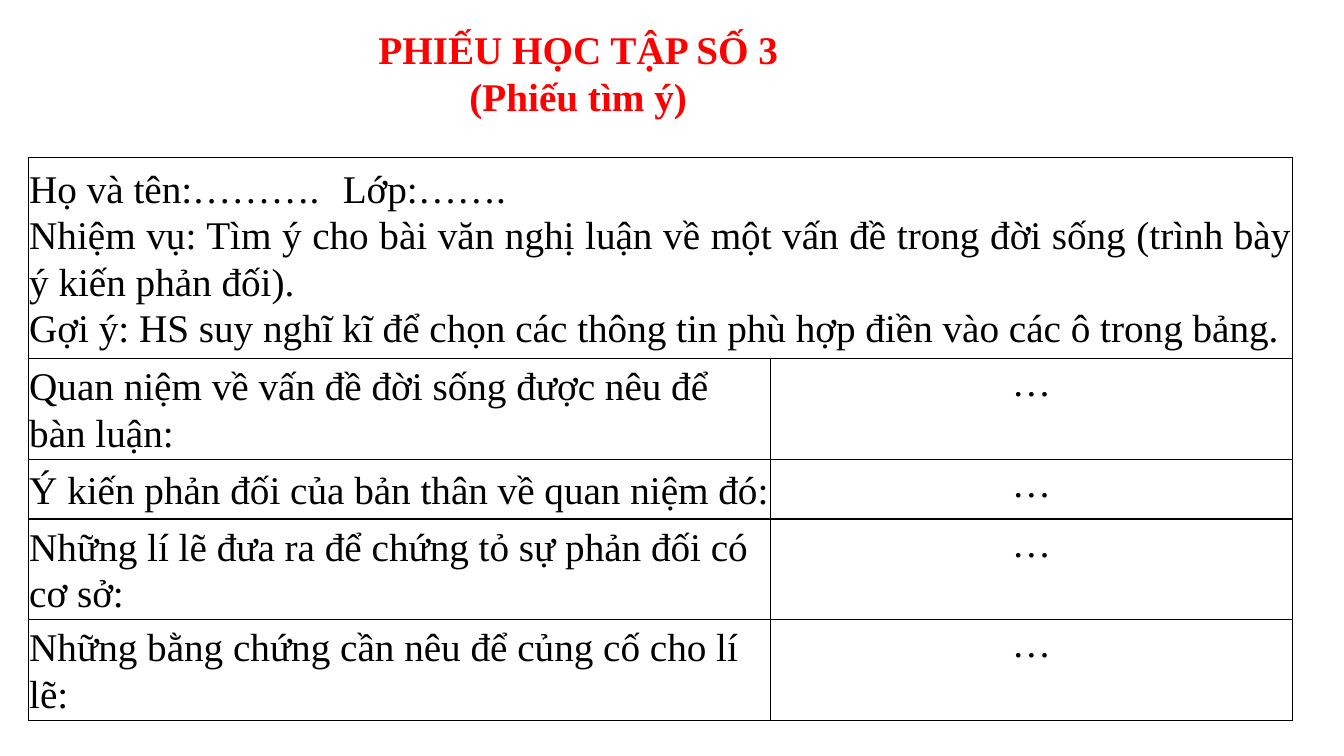
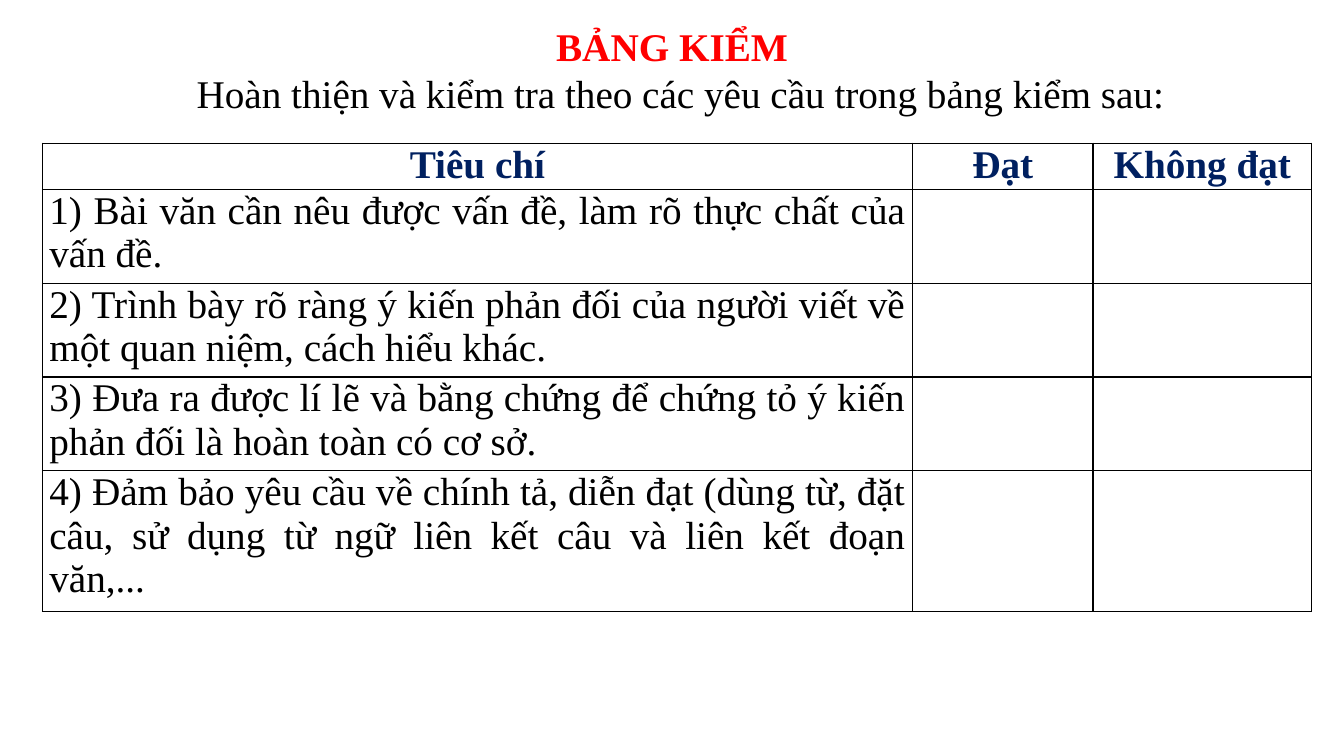
from lxml.etree import SubElement
from pptx import Presentation
from pptx.dml.color import RGBColor
from pptx.enum.text import MSO_ANCHOR, MSO_AUTO_SIZE, PP_ALIGN
from pptx.oxml.ns import qn
from pptx.util import Inches, Pt

COLORS = {"title": "FF0000", "header": "002060", "text": "000000",
          "border": "000000", "paper": "FFFFFF"}
FONT = "Times New Roman"
SIZE = 28
BORDER = 1
TITLE_ONLY = 5


def write(frame, text, color="text", bold=False, align=PP_ALIGN.LEFT,
          spacing=None, indent=None, tab=None, more=False):
    para = frame.add_paragraph() if more else frame.paragraphs[0]
    para.alignment = align
    if spacing:
        para.line_spacing = spacing
    properties = para._p.get_or_add_pPr()
    if indent:
        left, first = indent
        properties.set("marL", str(Inches(left)))
        properties.set("indent", str(Inches(first)))
    if tab:
        stops = SubElement(properties, qn("a:tabLst"))
        SubElement(stops, qn("a:tab"), pos=str(Inches(tab)), algn="l")
    span = para.add_run()
    span.text = text
    span.font.name = FONT
    span.font.size = Pt(SIZE)
    span.font.bold = bold
    span.font.color.rgb = RGBColor.from_string(COLORS[color])


def add_page(deck):
    page = deck.slides.add_slide(deck.slide_layouts[TITLE_ONLY])
    page.background.fill.solid()
    page.background.fill.fore_color.rgb = RGBColor.from_string(COLORS["paper"])
    return page


def place_title(page, box, text):
    title = page.shapes.title
    title.left, title.top, title.width, title.height = map(Inches, box)
    frame = title.text_frame
    frame.word_wrap = True
    frame.auto_size = MSO_AUTO_SIZE.NONE
    frame.vertical_anchor = MSO_ANCHOR.TOP
    write(frame, text, color="title", bold=True, align=PP_ALIGN.CENTER)
    return frame


def style_cell(cell, inset):
    cell.margin_left = cell.margin_right = Inches(inset)
    cell.margin_top = cell.margin_bottom = 0
    properties = cell._tc.get_or_add_tcPr()
    for side in ("lnL", "lnR", "lnT", "lnB"):
        line = SubElement(properties, qn(f"a:{side}"), w=str(Pt(BORDER)))
        fill = SubElement(line, qn("a:solidFill"))
        SubElement(fill, qn("a:srgbClr"), val=COLORS["border"])
    cell.fill.solid()
    cell.fill.fore_color.rgb = RGBColor.from_string(COLORS["paper"])


def place_table(page, left, top, widths, heights, inset):
    box = map(Inches, (left, top, sum(widths), sum(heights)))
    table = page.shapes.add_table(len(heights), len(widths), *box).table
    table.first_row = table.horz_banding = False
    for column, width in zip(table.columns, widths):
        column.width = Inches(width)
    for row, height in zip(table.rows, heights):
        row.height = Inches(height)
    for cell in table.iter_cells():
        style_cell(cell, inset)
    return table


def build_worksheet(deck):
    page = add_page(deck)
    frame = place_title(page, (3.57, 0.2, 4.33, 1.04), "PHIẾU HỌC TẬP SỐ 3")
    write(frame, "(Phiếu tìm ý)", color="title", bold=True,
          align=PP_ALIGN.CENTER, more=True)

    table = place_table(page, 0.28, 1.56, (7.36, 5.18),
                        (2.0, 1.0, 0.59, 1.0, 1.0), inset=0.01)
    intro = table.cell(0, 0)
    intro.merge(table.cell(0, 1))
    intro.vertical_anchor = MSO_ANCHOR.MIDDLE
    instructions = (
        "Họ và tên:……….\tLớp:…….",
        "Nhiệm vụ: Tìm ý cho bài văn nghị luận về một vấn đề trong đời sống "
        "(trình bày ý kiến phản đối).",
        "Gợi ý: HS suy nghĩ kĩ để chọn các thông tin phù hợp điền vào các ô "
        "trong bảng.",
    )
    for index, text in enumerate(instructions):
        write(intro.text_frame, text, align=PP_ALIGN.JUSTIFY, spacing=1.07,
              tab=3.11 if "\t" in text else None, more=index > 0)

    prompts = (
        "Quan niệm về vấn đề đời sống được nêu để bàn luận:",
        "Ý kiến phản đối của bản thân về quan niệm đó:",
        "Những lí lẽ đưa ra để chứng tỏ sự phản đối có cơ sở:",
        "Những bằng chứng cần nêu để củng cố cho lí lẽ:",
    )
    for row, text in enumerate(prompts, start=1):
        prompt, answer = table.cell(row, 0), table.cell(row, 1)
        prompt.vertical_anchor = MSO_ANCHOR.MIDDLE
        write(prompt.text_frame, text, spacing=1.07)
        write(answer.text_frame, "…", align=PP_ALIGN.CENTER, spacing=1.07)


def build_checklist(deck):
    page = add_page(deck)
    frame = place_title(page, (1.6, 0.17, 10.13, 1.04), "BẢNG KIỂM")
    write(frame, "Hoàn thiện và kiểm tra theo các yêu cầu trong bảng kiểm sau:",
          align=PP_ALIGN.JUSTIFY, indent=(0.24, 0.01), more=True)

    table = place_table(page, 0.42, 1.42, (8.63, 1.79, 2.17),
                        (0.46, 0.93, 0.93, 0.93, 1.4), inset=0.07)
    for column, text in enumerate(("Tiêu chí", "Đạt", "Không đạt")):
        write(table.cell(0, column).text_frame, text, color="header",
              bold=True, align=PP_ALIGN.CENTER)
    criteria = (
        "1) Bài văn cần nêu được vấn đề, làm rõ thực chất của vấn đề.",
        "2) Trình bày rõ ràng ý kiến phản đối của người viết về một quan niệm, "
        "cách hiểu khác.",
        "3) Đưa ra được lí lẽ và bằng chứng để chứng tỏ ý kiến phản đối là "
        "hoàn toàn có cơ sở.",
        "4) Đảm bảo yêu cầu về chính tả, diễn đạt (dùng từ, đặt câu, sử dụng "
        "từ ngữ liên kết câu và liên kết đoạn văn,...",
    )
    for row, text in enumerate(criteria, start=1):
        write(table.cell(row, 0).text_frame, text, align=PP_ALIGN.JUSTIFY)


def main():
    deck = Presentation()
    deck.slide_width, deck.slide_height = Inches(13.33), Inches(7.5)
    build_worksheet(deck)
    build_checklist(deck)
    deck.save("out.pptx")


if __name__ == "__main__":
    main()
